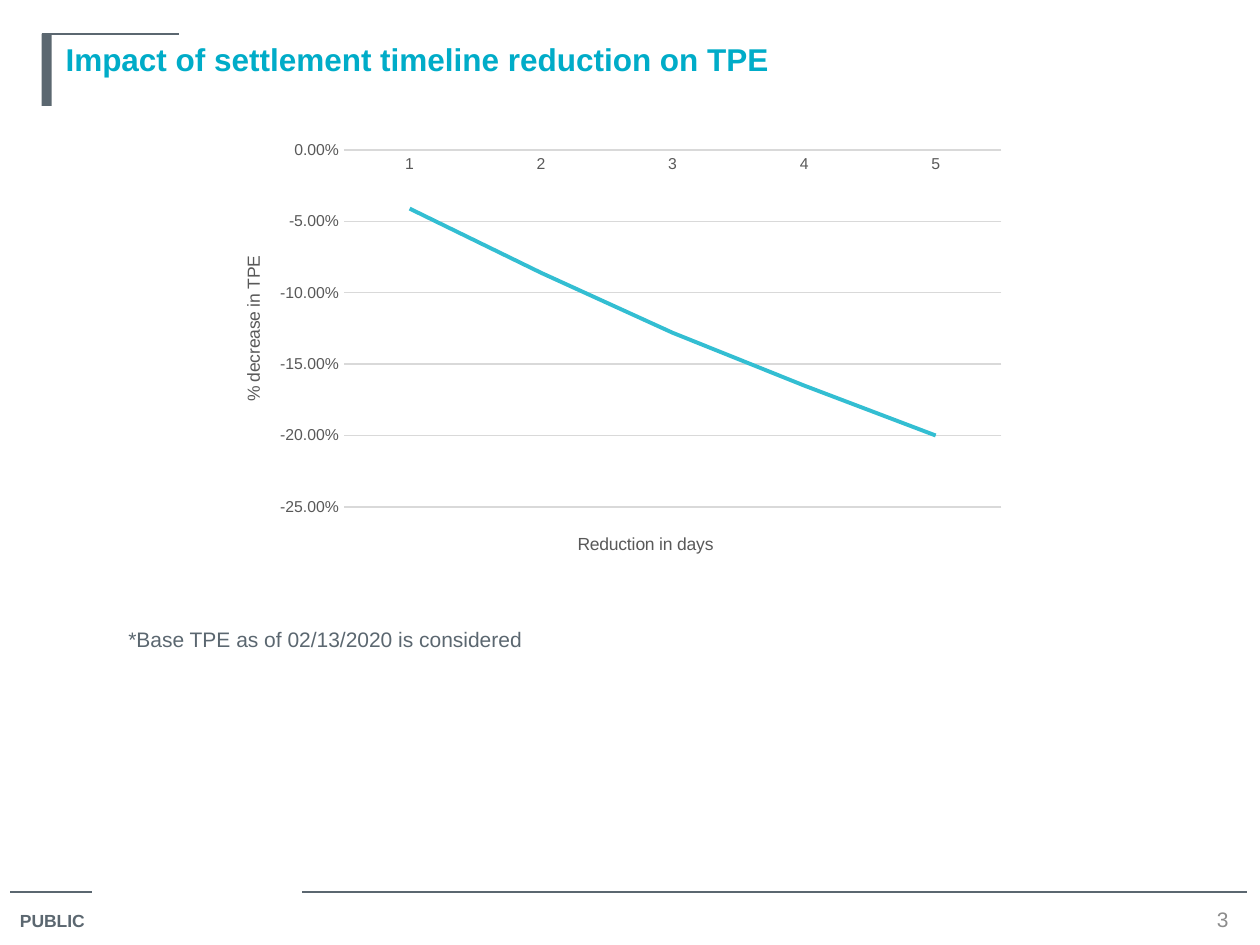
from dataclasses import dataclass

from lxml import etree
from pptx import Presentation
from pptx import util as u
from pptx.chart.data import CategoryChartData
from pptx.dml.color import RGBColor
from pptx.enum import chart as charts, shapes, text
from pptx.oxml.ns import qn

SLATE, TEAL, LINE_BLUE = "5B6770", "00ACC8", "33BED2"
GRAY, AXIS_TEXT, GRID = "8C8C8C", "595959", "D9D9D9"


@dataclass
class Rule:
    left: float
    right: float
    top: float


@dataclass
class Label:
    wording: str
    left: float
    top: float
    width: float
    height: float
    size: float
    color: str
    bold: bool = False
    centered: bool = False


RULES = [Rule(0.08, 0.73, 7.08), Rule(2.4, 9.9, 7.08), Rule(0.33, 1.42, 0.27)]
LABELS = [
    Label("PUBLIC", 0.06, 7.17, 0.77, 0.28, 10, SLATE, bold=True),
    Label("3", 9.58, 7.18, 0.25, 0.23, 12, GRAY, centered=True),
    Label("*Base TPE as of 02/13/2020 is considered", 0.92, 4.92, 8.17, 0.3, 12, SLATE),
]
TPE_CHANGE = {"1": -0.041, "2": -0.086, "3": -0.128, "4": -0.165, "5": -0.2}


def rgb(color: str) -> RGBColor:
    return RGBColor.from_string(color)


def set_font(font, size: float, color: str, bold: bool = False) -> None:
    font.name, font.size, font.bold = "Arial", u.Pt(size), bold
    font.color.rgb = rgb(color)


def set_line(line, color: str, width: float) -> None:
    line.color.rgb = rgb(color)
    line.width = u.Pt(width)


def draw_rule(page, rule: Rule) -> None:
    line = page.shapes.add_connector(
        shapes.MSO_CONNECTOR.STRAIGHT, u.Inches(rule.left), u.Inches(rule.top),
        u.Inches(rule.right), u.Inches(rule.top))
    set_line(line.line, SLATE, 0.75)
    etree.SubElement(line._element.spPr, qn("a:effectLst"))


def draw_label(page, label: Label) -> None:
    box = page.shapes.add_textbox(*map(u.Inches, (label.left, label.top, label.width, label.height)))
    frame = box.text_frame
    frame.word_wrap = True
    para = frame.paragraphs[0]
    para.text = label.wording
    if label.centered:
        frame.margin_left = frame.margin_right = frame.margin_top = frame.margin_bottom = 0
        frame.vertical_anchor = text.MSO_ANCHOR.MIDDLE
        para.alignment = text.PP_ALIGN.CENTER
    set_font(para.font, label.size, label.color, label.bold)


def place(element, index: int, **values) -> None:
    """Give a chart part a manual layout, in fractions of the chart."""
    for old in element.findall(qn("c:layout")):
        element.remove(old)
    layout = etree.Element(qn("c:layout"))
    element.insert(index, layout)
    manual = etree.SubElement(layout, qn("c:manualLayout"))
    for tag, value in values.items():
        etree.SubElement(manual, qn(f"c:{tag}")).set("val", str(value))


def format_axis(axis, title: str, x: float, y: float) -> None:
    axis.has_title = True
    para = axis.axis_title.text_frame.paragraphs[0]
    para.text = title
    set_font(para.font, 10, AXIS_TEXT)
    place(axis.axis_title._element, 1, xMode="edge", yMode="edge", x=x, y=y)
    axis.major_tick_mark = axis.minor_tick_mark = charts.XL_TICK_MARK.NONE
    set_font(axis.tick_labels.font, 9, AXIS_TEXT)


def draw_chart(page) -> None:
    data = CategoryChartData(number_format="0.00%")
    data.categories = list(TPE_CHANGE)
    data.add_series("Series 1", list(TPE_CHANGE.values()))
    chart = page.shapes.add_chart(
        charts.XL_CHART_TYPE.LINE, *map(u.Inches, (1.67, 1.05, 6.42, 3.54)), data).chart
    chart.has_legend = chart.has_title = False
    set_font(chart.font, 10, "000000")
    plot = chart.plots[0]
    plot.vary_by_categories = False
    place(chart._chartSpace.chart.plotArea, 0, layoutTarget="inner",
          xMode="edge", yMode="edge", x=0.165, y=0.04, w=0.813, h=0.8)

    series = plot.series[0]
    series.smooth = False
    series.marker.style = charts.XL_MARKER_STYLE.NONE
    set_line(series.format.line, LINE_BLUE, 2.25)

    days, change = chart.category_axis, chart.value_axis
    format_axis(days, "Reduction in days", 0.45, 0.89)
    set_line(days.format.line, GRID, 0.75)
    format_axis(change, "% decrease in TPE", 0.035, 0.27)
    change.axis_title.text_frame._txBody.bodyPr.set("rot", "-5400000")
    change.minimum_scale, change.maximum_scale, change.major_unit = -0.25, 0, 0.05
    change.tick_labels.number_format = "0.00%"
    change.tick_labels.number_format_is_linked = False
    change.format.line.fill.background()
    set_line(change.major_gridlines.format.line, GRID, 0.75)


def draw_title(page) -> None:
    title = page.shapes.title
    title.left, title.top, title.width, title.height = map(u.Inches, (0.42, 0.27, 9.25, 0.65))
    frame = title.text_frame
    frame.vertical_anchor = text.MSO_ANCHOR.TOP
    para = frame.paragraphs[0]
    para.text = "Impact of settlement timeline reduction on TPE"
    para.alignment = text.PP_ALIGN.LEFT
    set_font(para.font, 18, TEAL, bold=True)


def main() -> None:
    deck = Presentation()
    deck.slide_width, deck.slide_height = u.Inches(10), u.Inches(7.5)
    page = deck.slides.add_slide(deck.slide_layouts[5])

    # Frame: thin rules and the bar beside the title
    for rule in RULES:
        draw_rule(page, rule)
    bar = page.shapes.add_shape(
        shapes.MSO_SHAPE.RECTANGLE, *map(u.Inches, (0.33, 0.27, 0.08, 0.57)))
    bar.shadow.inherit = False
    bar.fill.solid()
    bar.fill.fore_color.rgb = rgb(SLATE)
    bar.line.fill.background()

    # Content
    draw_title(page)
    draw_chart(page)
    for label in LABELS:
        draw_label(page, label)

    deck.save("out.pptx")


if __name__ == "__main__":
    main()
